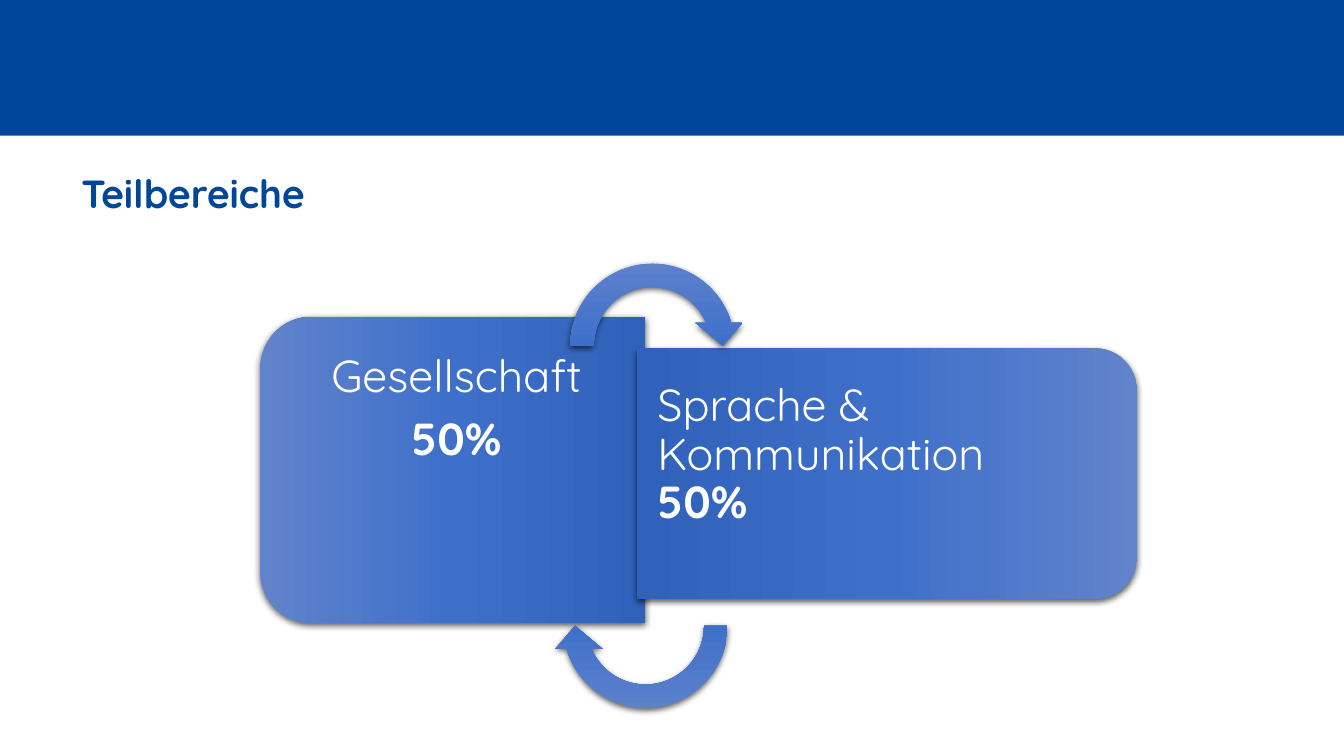
from lxml import etree
from pptx import Presentation
from pptx.dml.color import RGBColor
from pptx.enum.shapes import MSO_SHAPE as Kind
from pptx.enum.text import MSO_ANCHOR as Anchor, PP_ALIGN as Align
from pptx.oxml import parse_xml
from pptx.oxml.ns import nsdecls, qn
from pptx.util import Pt

FONT, BLUE, WHITE = "Quicksand", "004799", "FFFFFF"
STOPS = [(0, "6183CB"), (50, "3E70CA"), (100, "3062BB")]
ROUND = [0.167, 0]
CURVE = [0.125, 11.423, 204.577, 108, 0.125]


def rgb(code):
    """Turn a hex string into a colour."""
    return RGBColor.from_string(code)


def write(para, text, size, color, bold=False):
    """Add one formatted run to a paragraph."""
    para.line_spacing = 0.9
    run = para.add_run()
    run.text = text
    font = run.font
    font.name, font.size, font.bold = FONT, Pt(size), bold
    font.color.rgb = rgb(color)


def shade(shape):
    """Give a shape the blue gradient and a soft shadow."""
    shape.line.fill.background()
    shape.fill.gradient()
    shape.fill.gradient_angle = 270
    props = shape.fill._xPr
    stops = props.find(qn("a:gradFill")).find(qn("a:gsLst"))
    for stop in list(stops):
        stops.remove(stop)
    for pos, code in STOPS:
        stop = etree.SubElement(stops, qn("a:gs"), pos=str(pos * 1000))
        etree.SubElement(stop, qn("a:srgbClr"), val=code)
    props.append(parse_xml(
        f'<a:effectLst {nsdecls("a")}><a:outerShdw blurRad="{Pt(4.5)}" '
        f'dist="{Pt(1.5)}" dir="5400000" algn="ctr" rotWithShape="0">'
        '<a:srgbClr val="000000"><a:alpha val="63000"/></a:srgbClr>'
        '</a:outerShdw></a:effectLst>'))


def solid(slide, kind, box, turn, adjust):
    """Add a turned, shaded shape in its unturned box."""
    shape = slide.shapes.add_shape(kind, *map(Pt, box))
    shape.rotation = turn
    for i, value in enumerate(adjust):
        shape.adjustments[i] = value
    shade(shape)


def header(slide, box):
    """Draw the top band and set the title below it."""
    left, top, width, height = box
    band = slide.shapes.add_shape(Kind.RECTANGLE, *map(Pt, box))
    band.shadow.inherit = False
    band.fill.solid()
    band.fill.fore_color.rgb = rgb(BLUE)
    band.line.fill.background()
    title = slide.shapes.title
    title.left, title.top = Pt(left + 51), Pt(top + height + 23.8)
    title.width, title.height = Pt(width - 101), Pt(34.6)
    frame = title.text_frame
    frame.vertical_anchor = Anchor.TOP
    para = frame.paragraphs[0]
    para.alignment = Align.LEFT
    write(para, "Teilbereiche", 28, BLUE, True)


def panel(slide, box, turn, name, share, pads, align, gap):
    """Draw a panel with rounded outer corners and its two lines."""
    left, top, width, height = box
    tall = (left + (width - height) / 2, top + (height - width) / 2,
            height, width)
    solid(slide, Kind.ROUND_2_SAME_RECTANGLE, tall, turn, ROUND)
    frame = slide.shapes.add_textbox(*map(Pt, box)).text_frame
    frame.word_wrap = True
    frame.margin_left, frame.margin_top, frame.margin_right = map(Pt, pads)
    first, last = frame.paragraphs[0], frame.add_paragraph()
    first.alignment = last.alignment = align
    first.space_after = Pt(gap)
    write(first, name, 32, WHITE)
    write(last, share, 32, WHITE, True)


def main():
    """Build and save the slide."""
    deck = Presentation()
    deck.slide_width, deck.slide_height = Pt(960), Pt(540)
    layout = deck.slide_layouts.get_by_name("Title Only")
    slide = deck.slides.add_slide(layout)
    header(slide, (0, 0, 960, 97))
    panel(slide, (185.8, 226.2, 275, 219), 270, "Gesellschaft", "50%",
          (20, 26.6, 14.4), Align.CENTER, 10)
    panel(slide, (455.2, 248.8, 357, 179), 90, "Sprache & Kommunikation",
          "50%", (14.4, 24.8, 18), Align.LEFT, 0)
    for left, top, turn in [(399, 180, 0), (394, 380, 180)]:
        solid(slide, Kind.CIRCULAR_ARROW, (left, top, 134, 134), turn, CURVE)
    deck.save("out.pptx")


if __name__ == "__main__":
    main()
